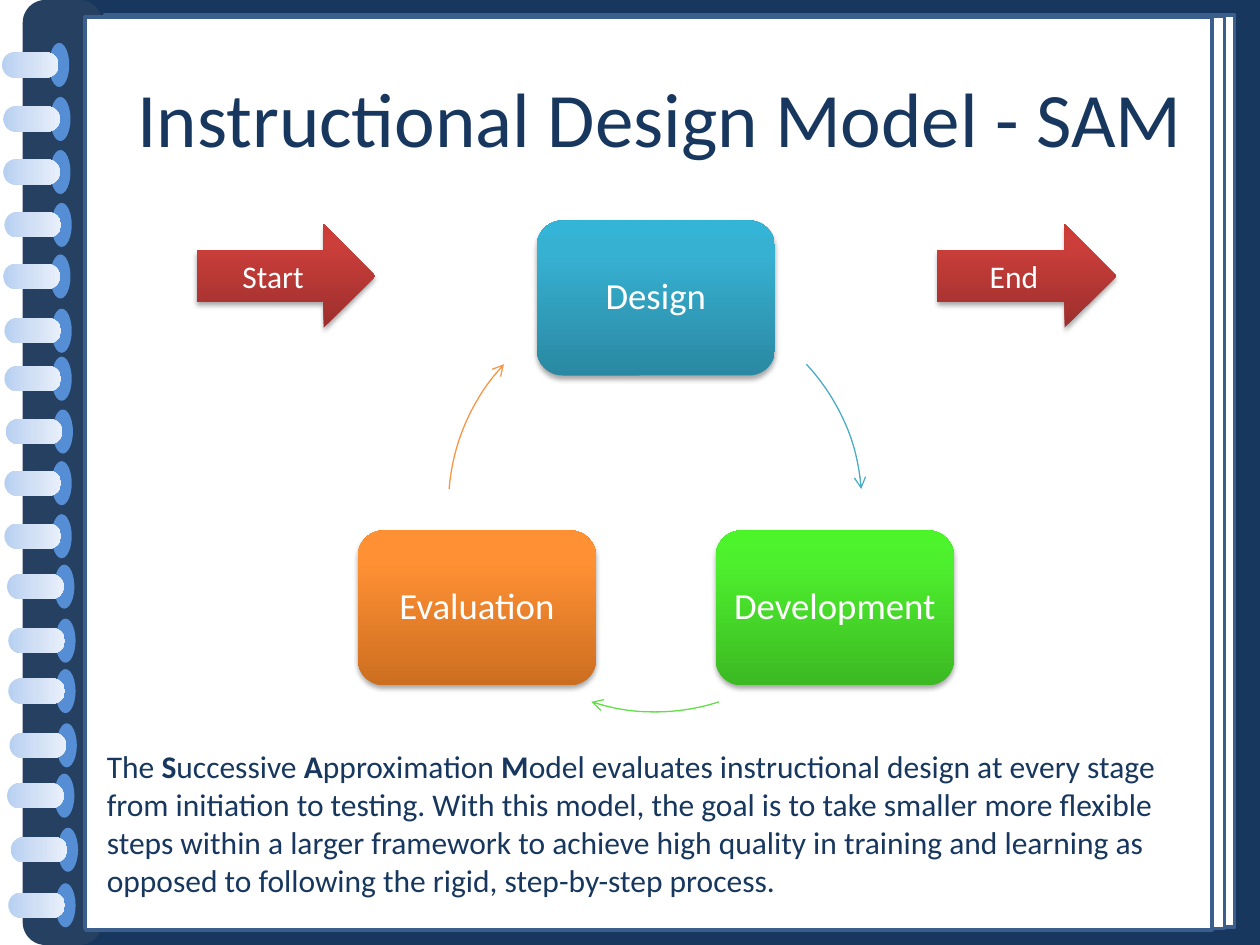
"""Build the SAM instructional design slide with its notebook frame."""
from typing import NamedTuple, Optional

from lxml import etree
from pptx import Presentation
from pptx.dml.color import RGBColor
from pptx.enum.shapes import MSO_SHAPE
from pptx.enum.text import MSO_ANCHOR, PP_ALIGN
from pptx.oxml.ns import qn
from pptx.util import Pt

RECT = MSO_SHAPE.RECTANGLE
ROUND = MSO_SHAPE.ROUNDED_RECTANGLE
OVAL = MSO_SHAPE.OVAL
ARC = MSO_SHAPE.ARC
ARROW = MSO_SHAPE.RIGHT_ARROW
CENTER = PP_ALIGN.CENTER
MIDDLE = MSO_ANCHOR.MIDDLE

FONT = "Calibri"
WHITE = RGBColor(0xFF, 0xFF, 0xFF)
NAVY = RGBColor(0x17, 0x37, 0x5E)
SPINE = RGBColor(0x25, 0x40, 0x61)
HOLE = RGBColor(0x55, 0x8E, 0xD5)
EDGE = RGBColor(0x3A, 0x5F, 0x8C)
TEAL = RGBColor(0x4B, 0xAC, 0xC6)
LIME = RGBColor(0x60, 0xE1, 0x46)
AMBER = RGBColor(0xF7, 0x96, 0x46)


class Grade(NamedTuple):
    low: RGBColor
    mid: RGBColor
    high: RGBColor
    split: int = 80
    angle: int = 90


class Block(NamedTuple):
    text: str
    kind: int
    box: tuple[float, float, float, float]
    grade: Grade
    size: int
    space: float


class Sweep(NamedTuple):
    start: float
    end: float
    color: RGBColor


RING = Grade(RGBColor(0xB7, 0xD0, 0xF1), RGBColor(0xD2, 0xE0, 0xF5),
             RGBColor(0xE8, 0xEF, 0xFA), 50, 270)
BLUE = Grade(RGBColor(0x2A, 0x88, 0xA2), RGBColor(0x37, 0xB1, 0xD2), RGBColor(0x34, 0xB4, 0xD6))
GREEN = Grade(RGBColor(0x3C, 0xB9, 0x23), RGBColor(0x4E, 0xF0, 0x2E), RGBColor(0x4C, 0xF5, 0x2A))
ORANGE = Grade(RGBColor(0xCC, 0x6E, 0x20), RGBColor(0xFF, 0x90, 0x34), RGBColor(0xFF, 0x91, 0x36))
RED = Grade(RGBColor(0x9C, 0x2F, 0x2D), RGBColor(0xCB, 0x3E, 0x3A), RGBColor(0xCE, 0x3B, 0x37))

RINGS = [
    (10.1, 20.9), (10.8, 51.8), (10.8, 82.1), (11.5, 112.3), (10.8, 141.8), (11.5, 172.8),
    (11.5, 200.2), (12.2, 230.4), (11.5, 259.9), (11.5, 290.2), (13, 319), (13.7, 349.9),
    (13.7, 378.7), (14.4, 409.7), (13, 438.5), (15.1, 469.4), (13.7, 501.1),
]
PAGES = [
    (59.8, 8.6, 645.8, 521.3),
    (48.2, 9.4, 651.6, 521.3),
    (49, 10.1, 643.7, 521.3),
]
BLOCKS = [
    Block("Design", ROUND, (306.7, 126, 136.1, 88.6), BLUE, 21, 0.9),
    Block("Development", ROUND, (409, 303.1, 136.1, 88.6), GREEN, 21, 0.9),
    Block("Evaluation", ROUND, (204.5, 303.1, 136.1, 88.6), ORANGE, 21, 0.9),
    Block("Start", ARROW, (112.3, 128.2, 102.2, 59), RED, 18, 1),
    Block("End", ARROW, (535.7, 128.2, 102.2, 59), RED, 18, 1),
]
SWEEPS = [Sweep(317, 355.5, TEAL), Sweep(72, 108, LIME), Sweep(184.5, 223, AMBER)]
CYCLE = (256.3, 170.6, 236.2, 236.2)
BODY = [
    ("The ", False), ("S", True), ("uccessive ", False), ("A", True),
    ("pproximation ", False), ("M", True),
    ("odel evaluates instructional design at every stage from initiation to testing. "
     "With this model, the goal is to take smaller more flexible steps within a larger "
     "framework to achieve high quality in training and learning as opposed to following "
     "the rigid, step-by-step process.", False),
]


def add_form(slide, kind: int, box: tuple, color: Optional[RGBColor] = None):
    form = slide.shapes.add_shape(kind, *map(Pt, box))
    form.shadow.inherit = False
    form.line.fill.background()
    if color is None:
        form.fill.background()
    else:
        form.fill.solid()
        form.fill.fore_color.rgb = color
    return form


def set_grade(form, grade: Grade) -> None:
    form.fill.gradient()
    form.fill.gradient_angle = grade.angle
    stops = form.element.spPr.find(".//" + qn("a:gsLst"))
    for stop in list(stops):
        stops.remove(stop)
    for place, color in zip((0, grade.split, 100), grade[:3]):
        stop = etree.SubElement(stops, qn("a:gs"), pos=str(place * 1000))
        etree.SubElement(stop, qn("a:srgbClr"), val=str(color))


def add_shade(form) -> None:
    effects = form.element.spPr.find(qn("a:effectLst"))
    shade = etree.SubElement(effects, qn("a:outerShdw"), blurRad=str(Pt(3.1)),
                             dist=str(Pt(1.8)), dir="5400000", rotWithShape="0")
    color = etree.SubElement(shade, qn("a:srgbClr"), val="000000")
    etree.SubElement(color, qn("a:alpha"), val="35000")


def set_font(para, size: float, color: RGBColor) -> None:
    para.font.name = FONT
    para.font.size = Pt(size)
    para.font.color.rgb = color


def add_frame(slide) -> None:
    add_form(slide, RECT, (43.9, 0, 676.1, 540), NAVY)
    add_form(slide, ROUND, (13, 0, 45.4, 540), SPINE).adjustments[0] = 0.285
    for left, top in RINGS:
        add_form(slide, OVAL, (left + 18, top + 3.6, 11.5, 25.2), HOLE)
        ring = add_form(slide, ROUND, (left, top, 14.4, 32.4))
        ring.adjustments[0] = 0.5
        ring.rotation = 270
        set_grade(ring, RING)
    for box in PAGES:
        page = add_form(slide, RECT, box, WHITE)
        page.line.color.rgb = EDGE
        page.line.width = Pt(2)


def add_title(slide, text: str) -> None:
    title = slide.shapes.title
    slide.shapes.element.append(title.element)
    title.left, title.top, title.width, title.height = map(Pt, (70.6, 21.6, 613.4, 90))
    frame = title.text_frame
    frame.text = text
    frame.vertical_anchor = MIDDLE
    frame.paragraphs[0].alignment = CENTER
    set_font(frame.paragraphs[0], 44, NAVY)


def add_block(slide, block: Block) -> None:
    form = add_form(slide, block.kind, block.box)
    set_grade(form, block.grade)
    add_shade(form)
    frame = form.text_frame
    frame.text = block.text
    frame.vertical_anchor = MIDDLE
    frame.margin_left = frame.margin_right = Pt(2)
    para = frame.paragraphs[0]
    para.alignment = CENTER
    para.line_spacing = block.space
    set_font(para, block.size, WHITE)


def add_sweep(slide, sweep: Sweep) -> None:
    arc = add_form(slide, ARC, CYCLE)
    arc.adjustments[0] = sweep.start * 0.6
    arc.adjustments[1] = sweep.end * 0.6
    arc.line.color.rgb = sweep.color
    arc.line.width = Pt(0.75)
    etree.SubElement(arc.element.spPr.find(qn("a:ln")), qn("a:tailEnd"), type="arrow")


def add_body(slide) -> None:
    frame = slide.shapes.add_textbox(*map(Pt, (54, 423.4, 629.3, 116.6))).text_frame
    frame.word_wrap = True
    para = frame.paragraphs[0]
    set_font(para, 18, NAVY)
    for text, bold in BODY:
        run = para.add_run()
        run.text = text
        run.font.bold = bold


def main() -> None:
    deck = Presentation()
    deck.slide_width, deck.slide_height = Pt(720), Pt(540)
    slide = deck.slides.add_slide(deck.slide_layouts[5])
    add_frame(slide)
    add_title(slide, "Instructional Design Model - SAM")
    for block in BLOCKS:
        add_block(slide, block)
    for sweep in SWEEPS:
        add_sweep(slide, sweep)
    add_body(slide)
    deck.save("out.pptx")


if __name__ == "__main__":
    main()
